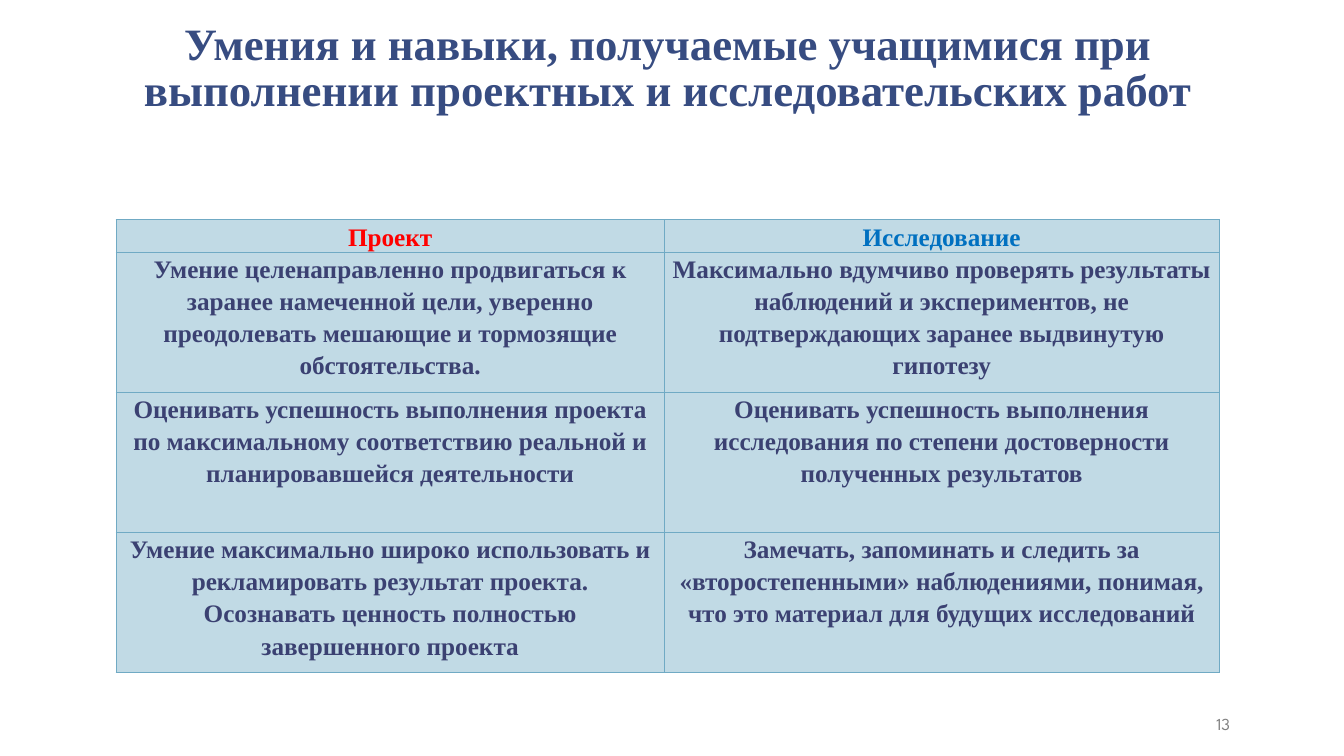
from lxml import etree
from pptx import Presentation
from pptx.dml.color import RGBColor
from pptx.enum.text import MSO_ANCHOR, PP_ALIGN
from pptx.oxml.ns import qn
from pptx.util import Inches, Pt

CENTER, RIGHT = PP_ALIGN.CENTER, PP_ALIGN.RIGHT
TOP, BOTTOM = MSO_ANCHOR.TOP, MSO_ANCHOR.BOTTOM
TITLE_ONLY = 5

SERIF = "Times New Roman"
SANS = "League Spartan"
TITLE_BLUE = "374C81"
BODY_BLUE = "3B4172"
CELL_FILL = "C1DAE5"
BORDER = "70AAC4"

TITLE = ("Умения и навыки, получаемые учащимися при "
         "выполнении проектных и исследовательских работ")
HEADERS = [("Проект", "FF0000"), ("Исследование", "0070C0")]
SKILLS = [
    ("Умение целенаправленно продвигаться к заранее намеченной цели, уверенно "
     "преодолевать мешающие и тормозящие обстоятельства.",
     "Максимально вдумчиво проверять результаты наблюдений и экспериментов, не "
     "подтверждающих заранее выдвинутую гипотезу"),
    ("Оценивать успешность выполнения проекта по максимальному соответствию "
     "реальной и планировавшейся деятельности",
     "Оценивать успешность выполнения исследования по степени достоверности "
     "полученных результатов"),
    ("Умение максимально широко использовать и рекламировать результат проекта. "
     "Осознавать ценность полностью завершенного проекта",
     "Замечать, запоминать и следить за «второстепенными» наблюдениями, понимая, "
     "что это материал для будущих исследований"),
]
COLUMN_WIDTHS = [5.44, 5.5]
ROW_HEIGHTS = [0.32, 1.39, 1.39, 1.39]


def color(code):
    return RGBColor.from_string(code)


def write(frame, text, size, font, code, bold, align, spacing=1.0):
    frame.text = text
    para = frame.paragraphs[0]
    para.alignment = align
    para.line_spacing = spacing
    para.space_before = Pt(0)
    span = para.runs[0]
    span.font.size = Pt(size)
    span.font.name = font
    span.font.bold = bold
    span.font.color.rgb = color(code)


def set_box(shape, left, top, width, height):
    shape.left, shape.top = Inches(left), Inches(top)
    shape.width, shape.height = Inches(width), Inches(height)
    frame = shape.text_frame
    frame.word_wrap = True
    frame.vertical_anchor = BOTTOM
    frame.margin_left = frame.margin_right = Inches(0.13)
    frame.margin_top = frame.margin_bottom = Inches(0.07)
    return frame


def add_borders(cell):
    properties = cell._tc.get_or_add_tcPr()
    for side in ("lnL", "lnR", "lnT", "lnB"):
        line = etree.SubElement(properties, qn(f"a:{side}"), w=str(Pt(0.5)))
        fill = etree.SubElement(line, qn("a:solidFill"))
        etree.SubElement(fill, qn("a:srgbClr"), val=BORDER)


def fill_cell(cell, text, code):
    cell.margin_left = cell.margin_right = Inches(0.07)
    cell.margin_top = cell.margin_bottom = 0
    cell.vertical_anchor = TOP
    add_borders(cell)
    cell.fill.solid()
    cell.fill.fore_color.rgb = color(CELL_FILL)
    write(cell.text_frame, text, 18, SERIF, code, True, CENTER, 1.15)


def add_skills_table(page):
    table = page.shapes.add_table(
        len(ROW_HEIGHTS), len(COLUMN_WIDTHS), Inches(1.15), Inches(2.18),
        Inches(sum(COLUMN_WIDTHS)), Inches(sum(ROW_HEIGHTS))).table
    for column, width in zip(table.columns, COLUMN_WIDTHS):
        column.width = Inches(width)
    for row, height in zip(table.rows, ROW_HEIGHTS):
        row.height = Inches(height)
    body = [[(text, BODY_BLUE) for text in pair] for pair in SKILLS]
    for row, entries in zip(table.rows, [HEADERS] + body):
        for cell, (text, code) in zip(row.cells, entries):
            fill_cell(cell, text, code)


def main():
    deck = Presentation()
    deck.slide_width, deck.slide_height = Inches(13.33), Inches(7.5)
    page = deck.slides.add_slide(deck.slide_layouts[TITLE_ONLY])

    # Title
    frame = set_box(page.shapes.title, 1.07, 0.21, 11.11, 1.01)
    write(frame, TITLE, 32, SERIF, TITLE_BLUE, True, CENTER, 0.85)

    # Comparison of skills
    add_skills_table(page)

    # Page number
    number = page.shapes.add_textbox(0, 0, 0, 0)
    frame = set_box(number, 11.12, 7, 1.21, 0.35)
    write(frame, "13", 12, SANS, "808080", False, RIGHT)

    deck.save("out.pptx")


if __name__ == "__main__":
    main()
